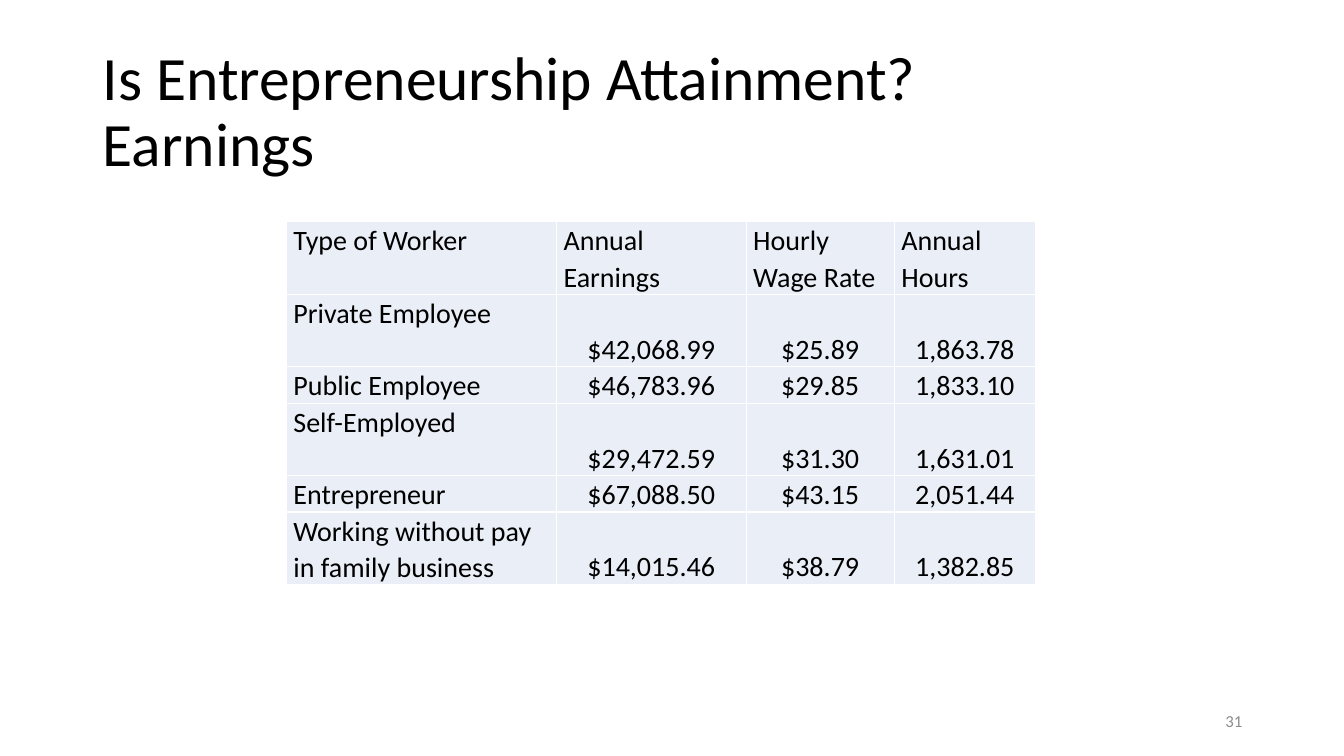
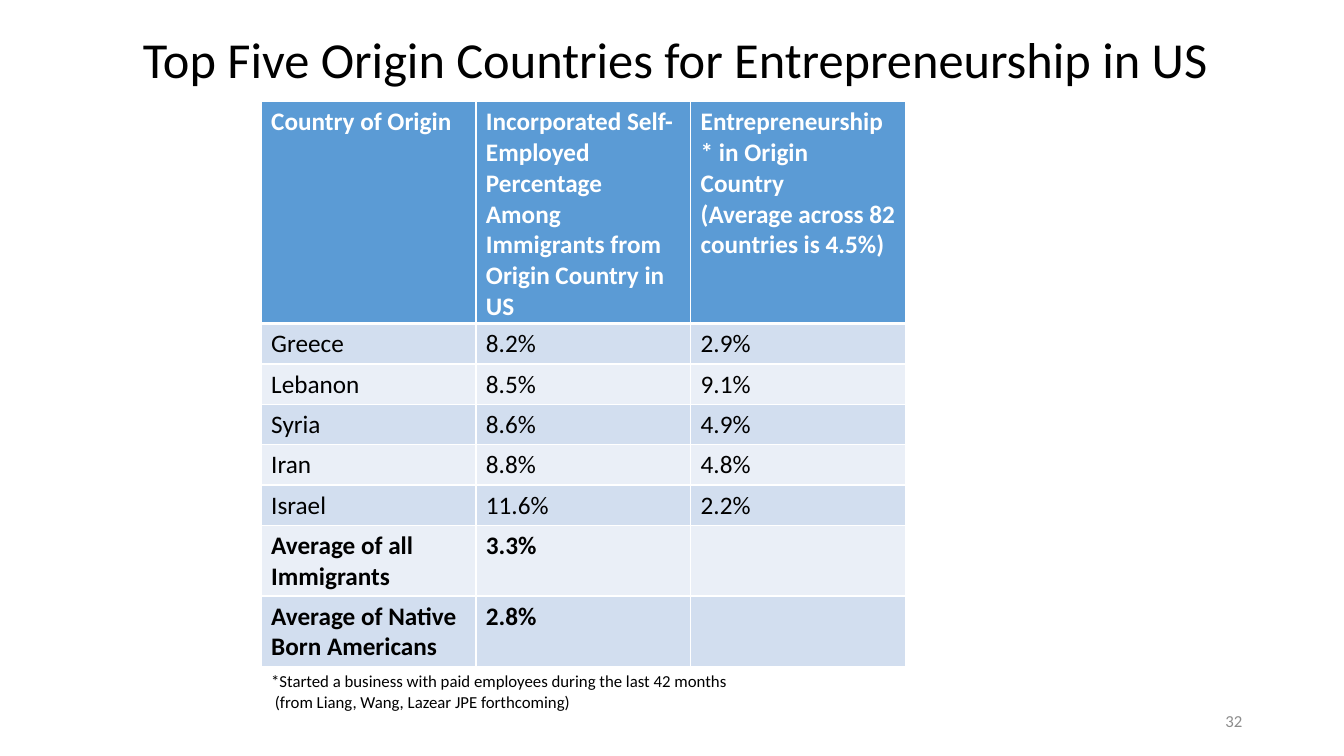
from dataclasses import dataclass

from lxml import etree
from pptx import Presentation
from pptx.dml.color import RGBColor
from pptx.enum.text import MSO_ANCHOR, PP_ALIGN
from pptx.oxml.ns import qn
from pptx.util import Inches, Pt

LEFT, CENTER, RIGHT = PP_ALIGN.LEFT, PP_ALIGN.CENTER, PP_ALIGN.RIGHT
TOP, MIDDLE, BOTTOM = MSO_ANCHOR.TOP, MSO_ANCHOR.MIDDLE, MSO_ANCHOR.BOTTOM


@dataclass(frozen=True)
class Theme:
    font: str = "Calibri"
    ink: str = "000000"
    white: str = "FFFFFF"
    muted: str = "8C8C8C"
    head: str = "5B9BD5"
    band_dark: str = "D2DEEF"
    band_light: str = "EAEFF7"
    title: int = 44
    title_small: int = 36
    earnings: int = 20
    body: int = 18
    small: int = 12
    rule: int = 1
    rule_head: int = 3


T = Theme()

# Content
EARNINGS = {
    "title": ["Is Entrepreneurship Attainment?", "Earnings"],
    "number": "31",
    "rows": [
        ("Type of Worker", "Annual Earnings", "Hourly Wage Rate", "Annual Hours"),
        ("Private Employee", "$42,068.99", "$25.89", "1,863.78"),
        ("Public Employee", "$46,783.96", "$29.85", "1,833.10"),
        ("Self-Employed", "$29,472.59", "$31.30", "1,631.01"),
        ("Entrepreneur", "$67,088.50", "$43.15", "2,051.44"),
        ("Working without pay in family business", "$14,015.46", "$38.79", "1,382.85"),
    ],
    "lines": [2, 2, 1, 2, 1, 2],
}
ORIGINS = {
    "title": ["Top Five Origin Countries for Entrepreneurship in US"],
    "number": "32",
    "rows": [
        ("Country of Origin",
         "Incorporated Self-Employed Percentage\nAmong Immigrants from Origin Country in US",
         "Entrepreneurship* in Origin Country\n(Average across 82 countries is 4.5%)"),
        ("Greece", "8.2%", "2.9%"),
        ("Lebanon", "8.5%", "9.1%"),
        ("Syria", "8.6%", "4.9%"),
        ("Iran", "8.8%", "4.8%"),
        ("Israel", "11.6%", "2.2%"),
        ("Average of all Immigrants", "3.3%", ""),
        ("Average of Native Born Americans", "2.8%", ""),
    ],
    "lines": [7, 1, 1, 1, 1, 1, 2, 2],
    "note": ["*Started a business with paid employees during the last 42 months",
             " (from Liang, Wang, Lazear JPE forthcoming)"],
}


# Text
def add_run(p, text, size, color=T.ink, bold=False):
    r = p.add_run()
    r.text = text
    r.font.name, r.font.size, r.font.bold = T.font, Pt(size), bold
    r.font.color.rgb = RGBColor.from_string(color)


def write(tf, paragraphs, size, color=T.ink, bold=False, align=LEFT, spacing=None):
    for i, text in enumerate(paragraphs):
        p = tf.add_paragraph() if i else tf.paragraphs[0]
        p.alignment, p.line_spacing = align, spacing
        for j, line in enumerate(text.split("\n")):
            if j:
                p.add_line_break()
            add_run(p, line, size, color, bold)


def add_text(s, box, paragraphs, size, anchor=TOP, **style):
    tf = s.shapes.add_textbox(*map(Inches, box)).text_frame
    tf.word_wrap, tf.vertical_anchor = True, anchor
    write(tf, paragraphs, size, **style)


# Shared slide frame: title and page number
def add_slide(prs, content, title_at, title_size, align):
    s = prs.slides.add_slide(prs.slide_layouts[6])
    add_text(s, (*title_at, 11.5, 1.45), ["\n".join(content["title"])], title_size,
             MIDDLE, align=align, spacing=0.9)
    add_text(s, (9.42, 6.95, 3, 0.4), [content["number"]], T.small,
             MIDDLE, color=T.muted, align=RIGHT)
    return s


# Tables
def add_borders(cell, top, bottom):
    tcPr = cell._tc.get_or_add_tcPr()
    for side, width in (("L", T.rule), ("R", T.rule), ("T", top), ("B", bottom)):
        ln = etree.SubElement(tcPr, qn("a:ln" + side), w=str(Pt(width)))
        fill = etree.SubElement(ln, qn("a:solidFill"))
        etree.SubElement(fill, qn("a:srgbClr"), val=T.white)


def add_table(s, content, at, cols, line_height, padding, style_cell):
    rows = content["rows"]
    heights = [n * line_height + padding for n in content["lines"]]
    size = (sum(cols), sum(heights))
    table = s.shapes.add_table(len(rows), len(cols), *map(Inches, at + size)).table
    table.first_row = table.horz_banding = False
    for column, width in zip(table.columns, cols):
        column.width = Inches(width)
    for i, (row, height) in enumerate(zip(rows, heights)):
        table.rows[i].height = Inches(height)
        for j, text in enumerate(row):
            style_cell(table.cell(i, j), i, j, text)


def earnings_cell(cell, i, j, text):
    is_value = i > 0 and j > 0
    add_borders(cell, T.rule, T.rule)
    cell.fill.solid()
    cell.fill.fore_color.rgb = RGBColor.from_string(T.band_light)
    cell.margin_left = cell.margin_right = Inches(0.07)
    cell.margin_top = cell.margin_bottom = 0
    cell.vertical_anchor = BOTTOM if is_value else TOP
    write(cell.text_frame, [text], T.earnings,
          align=CENTER if is_value else LEFT, spacing=1.07)


def origins_cell(cell, i, j, text):
    is_head = i == 0
    add_borders(cell, T.rule_head if i == 1 else T.rule, T.rule_head if is_head else T.rule)
    band = T.band_dark if i % 2 else T.band_light
    cell.fill.solid()
    cell.fill.fore_color.rgb = RGBColor.from_string(T.head if is_head else band)
    if text:
        write(cell.text_frame, text.split("\n"), T.body,
              color=T.white if is_head else T.ink,
              bold=is_head or text.startswith("Average") or i > 5)


def main():
    prs = Presentation()
    prs.slide_width, prs.slide_height = Inches(13.33), Inches(7.5)

    # Earnings by type of worker
    s = add_slide(prs, EARNINGS, (0.92, 0.4), T.title, LEFT)
    add_table(s, EARNINGS, (2.84, 2.2), (2.68, 1.88, 1.47, 1.4), 0.36, 0, earnings_cell)

    # Entrepreneurship by origin country
    s = add_slide(prs, ORIGINS, (0.95, -0.11), T.title_small, CENTER)
    add_table(s, ORIGINS, (2.59, 1.01), (2.13,) * 3, 0.3, 0.1, origins_cell)
    add_text(s, (2.59, 6.61, 10.55, 0.5), ORIGINS["note"], T.small)

    prs.save("out.pptx")


if __name__ == "__main__":
    main()
